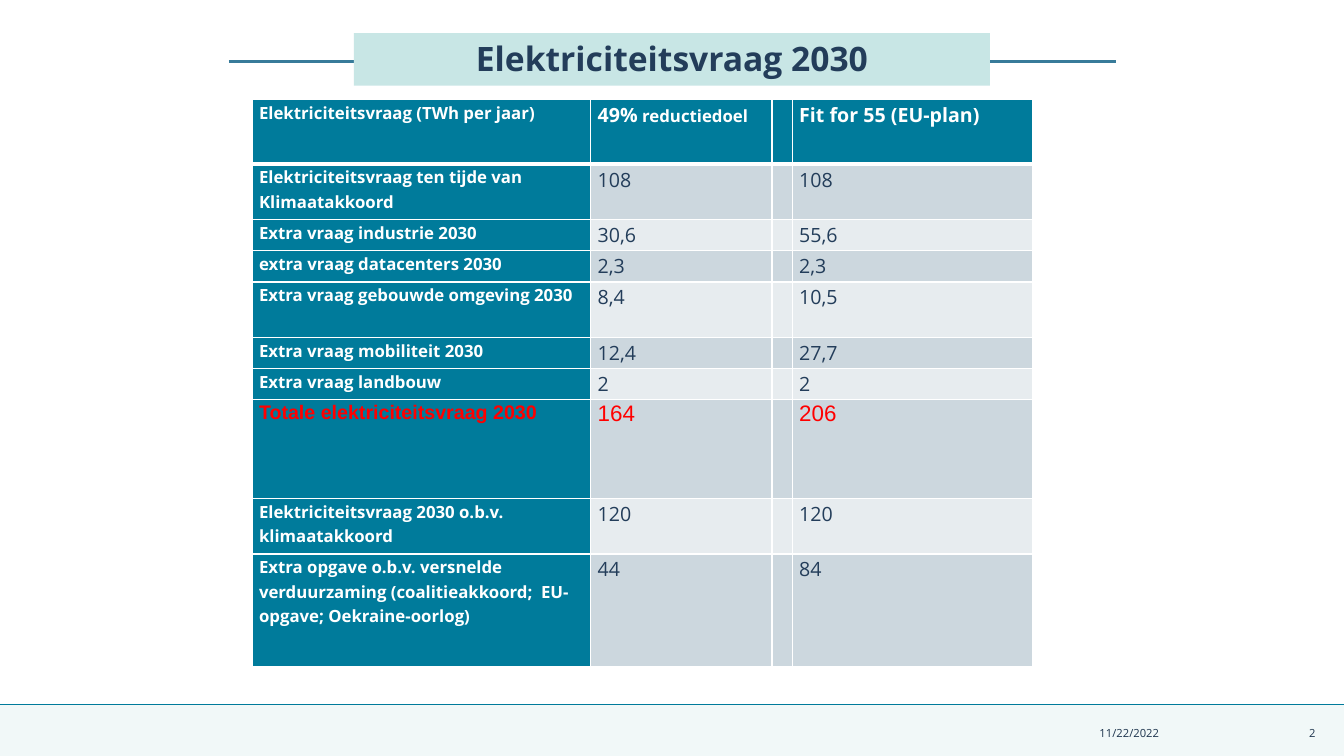
from dataclasses import dataclass

from lxml.etree import SubElement
from pptx import Presentation
from pptx.dml.color import RGBColor as Rgb
from pptx.enum.shapes import MSO_CONNECTOR as Connector, MSO_SHAPE as Preset
from pptx.enum.text import MSO_ANCHOR as Anchor, PP_ALIGN as Align
from pptx.oxml import parse_xml
from pptx.oxml.ns import nsdecls, qn
from pptx.util import Emu, Inches, Pt

SLIDE_WIDTH, SLIDE_HEIGHT = Inches(13.33), Inches(7.5)


@dataclass(frozen=True)
class Theme:
    font: str = "Open Sans"
    total_font: str = "Arial"
    navy: str = "233D5A"
    footer_ink: str = "1D344D"
    teal: str = "007B9B"
    title_rule: str = "387B9A"
    title_fill: str = "C8E6E5"
    footer_fill: str = "E4F3F3"
    bands: tuple[str, str] = ("CCD7DE", "E7ECEF")
    white: str = "FFFFFF"
    red: str = "FF0000"
    title_size: int = 24
    total_size: int = 16
    value_size: int = 14
    label_size: int = 12
    footer_size: int = 8


THEME = Theme()


@dataclass(frozen=True)
class Area:
    """Place and size in percent of the slide."""
    left: float
    top: float
    width: float
    height: float

    def lengths(self) -> tuple[Emu, Emu, Emu, Emu]:
        return across(self.left), down(self.top), across(self.width), down(self.height)


@dataclass(frozen=True)
class Rule:
    """Horizontal line, in percent of the slide."""
    start: float
    end: float
    top: float
    colour: str
    weight: float


@dataclass(frozen=True)
class Style:
    size: int
    colour: str
    bold: bool = False
    font: str = THEME.font


@dataclass(frozen=True)
class Demand:
    label: str
    reduction: str
    fit_for_55: str
    height: float
    total: bool = False


# Content
TITLE = "Elektriciteitsvraag 2030"
HEADER_HEIGHT = 8.53
COLUMN_WIDTHS = (25.2, 13.5, 1.5, 17.92)
LOW, MIDDLE = 4.13, 7.33
DEMANDS = (
    Demand("Elektriciteitsvraag ten tijde van Klimaatakkoord", "108", "108", MIDDLE),
    Demand("Extra vraag industrie 2030", "30,6", "55,6", LOW),
    Demand("extra vraag datacenters 2030", "2,3", "2,3", LOW),
    Demand("Extra vraag gebouwde omgeving 2030", "8,4", "10,5", MIDDLE),
    Demand("Extra vraag mobiliteit 2030", "12,4", "27,7", LOW),
    Demand("Extra vraag landbouw", "2", "2", LOW),
    Demand("Totale elektriciteitsvraag 2030", "164", "206", 13.07, total=True),
    Demand("Elektriciteitsvraag 2030 o.b.v. klimaatakkoord", "120", "120", MIDDLE),
    Demand("Extra opgave o.b.v. versnelde verduurzaming (coalitieakkoord;  EU-opgave; "
           "Oekraine-oorlog)", "44", "84", 14.93),
)
FOOTERS = (
    ("11/22/2022", Area(68.78, 94.27, 17.47, 5.33)),
    ("2", Area(94.28, 94.27, 3.6, 5.33)),
)

LABEL = Style(THEME.label_size, THEME.white, True)
HEADING = Style(THEME.value_size, THEME.white, True)
VALUE = Style(THEME.value_size, THEME.navy)
TOTAL_LABEL = Style(THEME.value_size, THEME.red, True, THEME.total_font)
TOTAL_VALUE = Style(THEME.total_size, THEME.red, False, THEME.total_font)


def across(percent: float) -> Emu:
    return Emu(round(SLIDE_WIDTH * percent / 100))


def down(percent: float) -> Emu:
    return Emu(round(SLIDE_HEIGHT * percent / 100))


def format_span(span, style: Style) -> None:
    span.font.name = style.font
    span.font.size = Pt(style.size)
    span.font.bold = style.bold
    span.font.color.rgb = Rgb.from_string(style.colour)


def add_panel(page, area: Area, colour: str):
    panel = page.shapes.add_shape(Preset.RECTANGLE, *area.lengths())
    panel.shadow.inherit = False
    panel.fill.solid()
    panel.fill.fore_color.rgb = Rgb.from_string(colour)
    panel.line.fill.background()
    return panel


def add_rule(page, rule: Rule) -> None:
    line = page.shapes.add_connector(
        Connector.STRAIGHT, across(rule.start), down(rule.top), across(rule.end), down(rule.top))
    line.line.color.rgb = Rgb.from_string(rule.colour)
    line.line.width = Pt(rule.weight)
    SubElement(line._element.spPr, qn("a:effectLst"))


def write_line(box, text: str, style: Style, align: Align, top_inset: float = 0) -> None:
    frame = box.text_frame
    frame.word_wrap = True
    frame.vertical_anchor = Anchor.MIDDLE
    frame.margin_left = frame.margin_right = frame.margin_bottom = 0
    frame.margin_top = Inches(top_inset)
    frame.text = text
    para = frame.paragraphs[0]
    para.alignment = align
    format_span(para.runs[0], style)


def set_borders(cell, top: float, bottom: float) -> None:
    properties = cell._tc.get_or_add_tcPr()
    weights = {"lnL": 1, "lnR": 1, "lnT": top, "lnB": bottom}
    for position, (side, weight) in enumerate(weights.items()):
        properties.insert(position, parse_xml(
            f'<a:{side} {nsdecls("a")} w="{Pt(weight)}"><a:solidFill>'
            f'<a:srgbClr val="{THEME.white}"/></a:solidFill></a:{side}>'))


def fill_cell(cell, spans: list[tuple[str, Style]], colour: str, row: int) -> None:
    cell.margin_left = cell.margin_right = Inches(0.07)
    cell.margin_top = cell.margin_bottom = 0
    cell.fill.solid()
    cell.fill.fore_color.rgb = Rgb.from_string(colour)
    set_borders(cell, top=3 if row == 1 else 1, bottom=3 if row == 0 else 1)
    para = cell.text_frame.paragraphs[0]
    para.line_spacing = 1.07
    para.space_after = Pt(8)
    for text, style in spans:
        span = para.add_run()
        span.text = text
        format_span(span, style)
    if not spans:
        # Keeps the empty column from stretching its rows
        SubElement(para._p, qn("a:endParaRPr"), sz=str(THEME.label_size * 100))


def add_demand_table(page) -> None:
    heights = (HEADER_HEIGHT, *(demand.height for demand in DEMANDS))
    area = Area(18.75, 13.2, sum(COLUMN_WIDTHS), sum(heights))
    table = page.shapes.add_table(len(heights), len(COLUMN_WIDTHS), *area.lengths()).table
    table.horz_banding = table.first_row = False
    for column, width in zip(table.columns, COLUMN_WIDTHS):
        column.width = across(width)
    for row, height in zip(table.rows, heights):
        row.height = down(height)

    lines = [[[("Elektriciteitsvraag (TWh per jaar)", LABEL)],
              [("49%", HEADING), (" reductiedoel", LABEL)],
              [],
              [("Fit for 55 (EU-plan)", HEADING)]]]
    for demand in DEMANDS:
        label, value = (TOTAL_LABEL, TOTAL_VALUE) if demand.total else (LABEL, VALUE)
        lines.append([[(demand.label, label)], [(demand.reduction, value)],
                      [], [(demand.fit_for_55, value)]])

    for row, line in enumerate(lines):
        for column, spans in enumerate(line):
            dark = row == 0 or column == 0
            colour = THEME.teal if dark else THEME.bands[(row - 1) % 2]
            fill_cell(table.cell(row, column), spans, colour, row)


def main() -> None:
    deck = Presentation()
    deck.slide_width, deck.slide_height = SLIDE_WIDTH, SLIDE_HEIGHT
    page = deck.slides.add_slide(deck.slide_layouts[6])

    # Footer band, half transparent
    band = add_panel(page, Area(0, 93.2, 100, 6.8), THEME.footer_fill)
    tint = band._element.spPr.find(qn("a:solidFill")).find(qn("a:srgbClr"))
    SubElement(tint, qn("a:alpha"), val="50000")
    add_rule(page, Rule(0, 100, 93.2, THEME.teal, 1))

    # Title on its rule
    add_rule(page, Rule(17.03, 83.05, 8.13, THEME.title_rule, 2.25))
    title = add_panel(page, Area(26.33, 4.4, 47.33, 6.93), THEME.title_fill)
    write_line(title, TITLE, Style(THEME.title_size, THEME.navy, True), Align.CENTER, 0.03)
    title.text_frame.paragraphs[0].line_spacing = 0.9

    # Demand table
    add_demand_table(page)

    # Date and page number
    for text, area in FOOTERS:
        box = page.shapes.add_textbox(*area.lengths())
        write_line(box, text, Style(THEME.footer_size, THEME.footer_ink), Align.RIGHT)

    deck.save("out.pptx")


if __name__ == "__main__":
    main()
